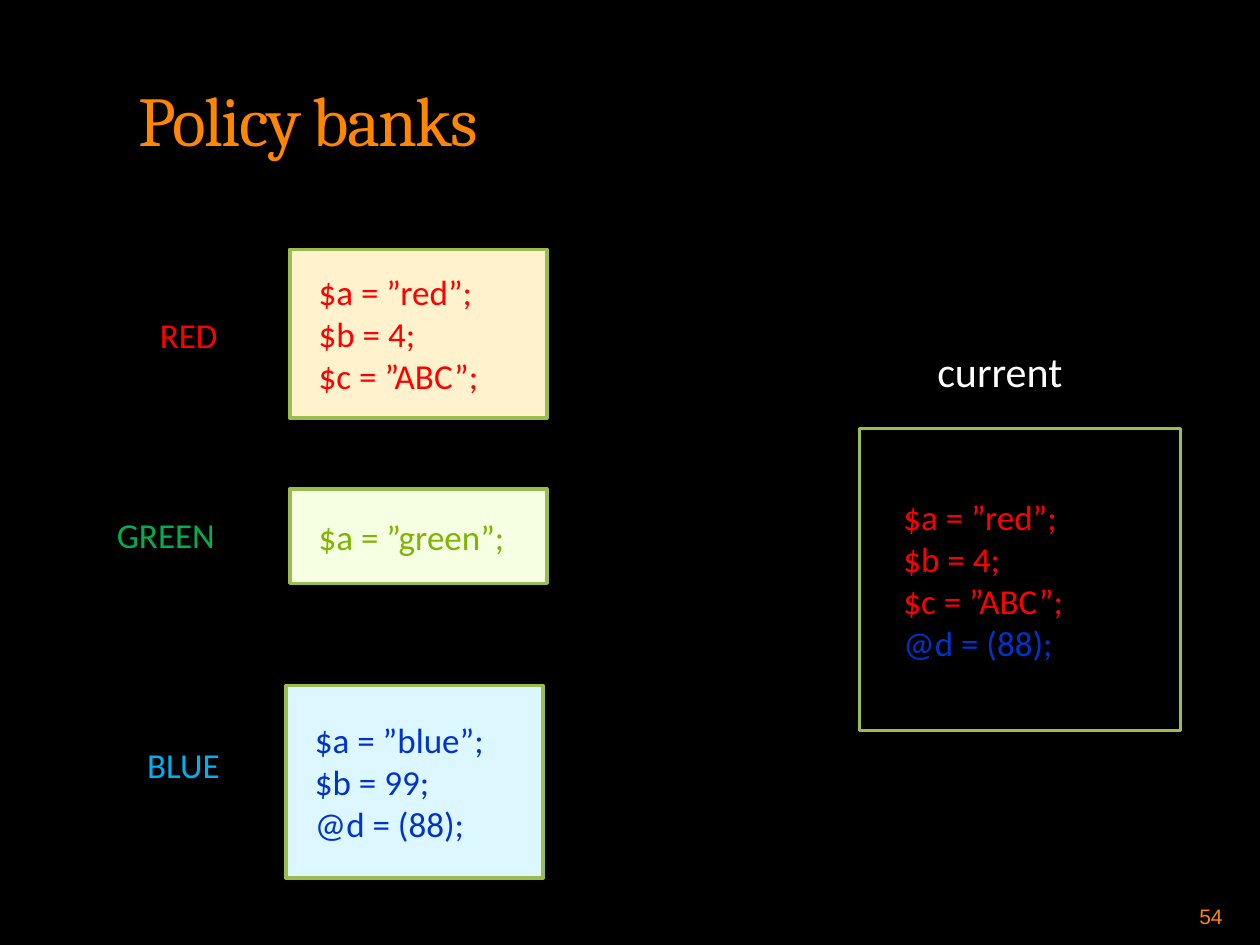
"""Builds the "Policy banks" slide: three named banks and the current one."""
import pptx
import pptx.dml.color
import pptx.enum.shapes
import pptx.enum.text
import pptx.util

Inches = pptx.util.Inches
ANCHOR = pptx.enum.text.MSO_ANCHOR

RED, BLUE, GREEN, ORANGE = "FF0000", "0033CC", "7DB500", "FF8601"
BORDER = "9BBD4F"
RED_LINES = ["$a = ”red”;", "$b = 4;", "$c = ”ABC”;"]
BLUE_ARRAY = "@d = (88);"

TITLE = ("Policy banks", (1, 0.56, 8.5, 1))
BANKS = [
    # position, fill, left inset, lines with their colours
    ((6.82, 3.4, 2.55, 2.4), "000000", 0.35,
     [(line, RED) for line in RED_LINES] + [(BLUE_ARRAY, BLUE)]),
    ((2.3, 1.98, 2.04, 1.34), "FFF2CC", 0.23, [(line, RED) for line in RED_LINES]),
    ((2.3, 3.88, 2.04, 0.75), "F6FFE1", 0.23, [("$a = ”green”;", GREEN)]),
    ((2.27, 5.44, 2.04, 1.53), "DCF7FF", 0.23,
     [(line, BLUE) for line in ("$a = ”blue”;", "$b = 99;", BLUE_ARRAY)]),
]
LABELS = [
    ("RED", (1.17, 2.44, 0.95, 0.43), 20, "Calibri", RED, ANCHOR.TOP),
    ("GREEN", (0.83, 4.03, 1.24, 0.43), 20, "Calibri", "00B050", ANCHOR.TOP),
    ("BLUE", (1.07, 5.85, 1.06, 0.43), 20, "Calibri", "00B0F0", ANCHOR.TOP),
    ("current", (7.34, 2.69, 1.28, 0.5), 24, "Calibri", "FFFFFF", ANCHOR.TOP),
    ("54", (9.42, 7.02, 0.5, 0.4), 12, "Arial", ORANGE, ANCHOR.BOTTOM),
]


def rgb(code):
    return pptx.dml.color.RGBColor.from_string(code)


def box(position):
    return [Inches(length) for length in position]


def write(frame, lines, size, font, anchor):
    frame.word_wrap = True
    frame.auto_size = pptx.enum.text.MSO_AUTO_SIZE.NONE
    frame.vertical_anchor = anchor
    frame.text = "\n".join(line for line, _ in lines)
    for paragraph, (_, color) in zip(frame.paragraphs, lines):
        paragraph.alignment = pptx.enum.text.PP_ALIGN.LEFT
        for run in paragraph.runs:
            run.font.size = pptx.util.Pt(size)
            run.font.name = font
            run.font.color.rgb = rgb(color)


def add_title(slide, text, position):
    title = slide.shapes.title
    title.left, title.top, title.width, title.height = box(position)
    write(title.text_frame, [(text, ORANGE)], 40, "Cambria", ANCHOR.TOP)
    title.text_frame.paragraphs[0].runs[0].font._element.set("spc", "-100")


def add_bank(slide, position, fill, inset, lines):
    bank = slide.shapes.add_shape(
        pptx.enum.shapes.MSO_SHAPE.RECTANGLE, *box(position))
    bank.shadow.inherit = False
    bank.fill.solid()
    bank.fill.fore_color.rgb = rgb(fill)
    bank.line.color.rgb = rgb(BORDER)
    bank.line.width = pptx.util.Pt(2)
    bank.text_frame.margin_left = Inches(inset)
    write(bank.text_frame, lines, 20, "Calibri", ANCHOR.MIDDLE)


def main():
    deck = pptx.Presentation()
    deck.slide_width, deck.slide_height = Inches(10), Inches(7.5)
    slide = deck.slides.add_slide(deck.slide_layouts.get_by_name("Title Only"))
    slide.background.fill.solid()
    slide.background.fill.fore_color.rgb = rgb("000000")
    add_title(slide, *TITLE)
    for bank in BANKS:
        add_bank(slide, *bank)
    for text, position, size, font, color, anchor in LABELS:
        label = slide.shapes.add_textbox(*box(position))
        write(label.text_frame, [(text, color)], size, font, anchor)
    deck.save("out.pptx")


if __name__ == "__main__":
    main()
